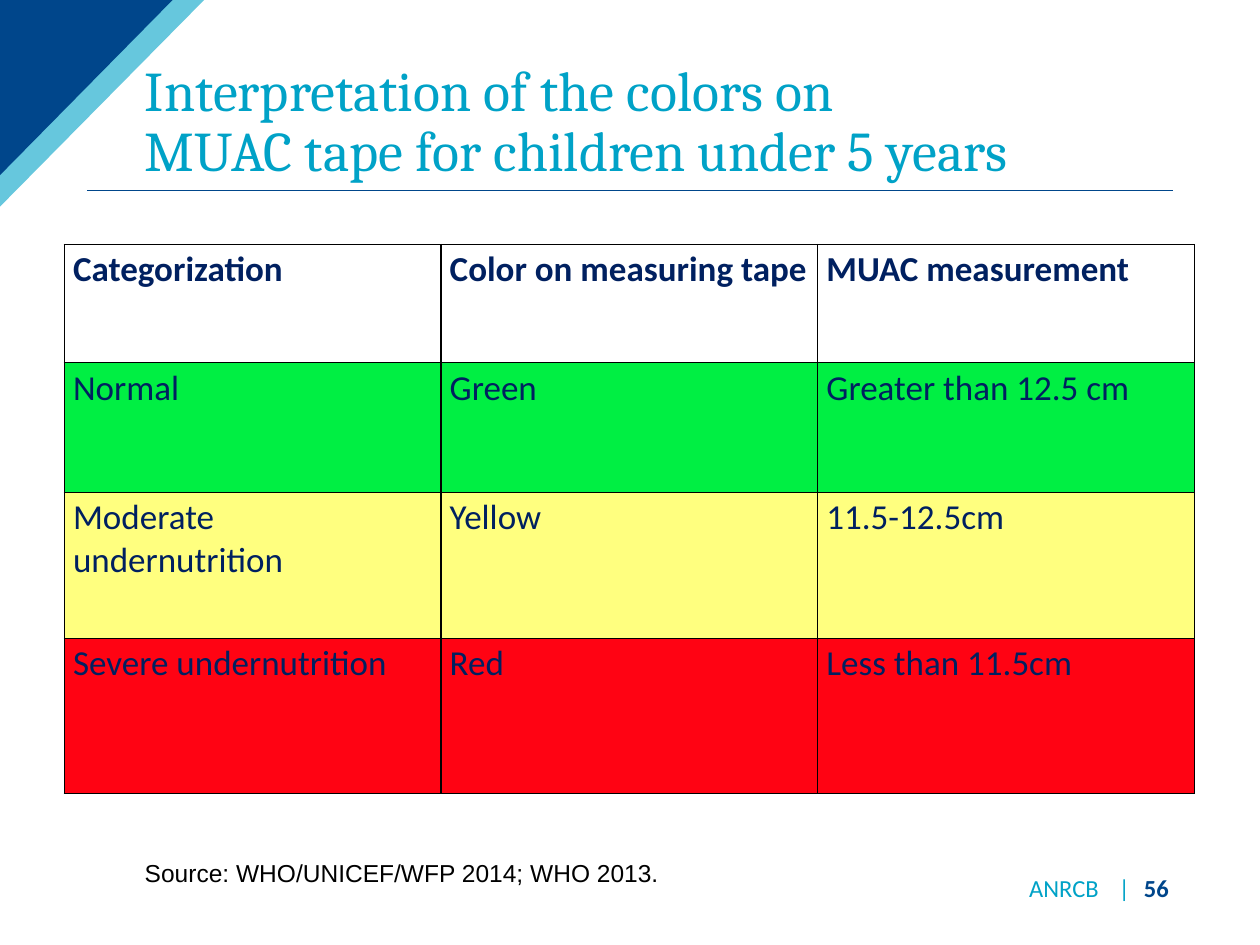
"""Build the slide on reading the colors of a MUAC tape."""
from dataclasses import dataclass

from lxml import etree
from pptx import Presentation
from pptx.dml.color import RGBColor
from pptx.enum.shapes import MSO_CONNECTOR
from pptx.enum.text import MSO_ANCHOR, PP_ALIGN
from pptx.oxml.ns import qn
from pptx.util import Emu, Inches, Pt

STRAIGHT = MSO_CONNECTOR.STRAIGHT
BOTTOM, MIDDLE, TOP = MSO_ANCHOR.BOTTOM, MSO_ANCHOR.MIDDLE, MSO_ANCHOR.TOP
LEFT = PP_ALIGN.LEFT

SLIDE_WIDTH, SLIDE_HEIGHT = Inches(10), Inches(7.5)
GRID_COLUMNS = 100
TITLE_ONLY = 5

COLORS = {
    "navy": "00468B",
    "cyan": "00A2C7",
    "table_text": "002060",
    "black": "000000",
    "white": "FFFFFF",
    "green": "00EF43",
    "yellow": "FFFF7F",
    "red": "FF0313",
}


@dataclass(frozen=True)
class Area:
    """A rectangle in grid units."""
    column: float
    row: float
    columns: float
    rows: float


@dataclass(frozen=True)
class Style:
    """The look of a run of text."""
    font: str
    size: int
    color: str
    bold: bool = False


@dataclass(frozen=True)
class Corner:
    """A triangle filling the top left corner of the slide."""
    columns: float
    rows: float
    color: str
    opacity: int = 100


@dataclass(frozen=True)
class Category:
    """A table row: its height, fill and cell texts."""
    rows: float
    fill: str
    texts: tuple[str, str, str]
    bold: bool = False


CORNERS = (
    Corner(16.2, 16.4, "cyan", 60),
    Corner(13.7, 13.9, "navy"),
)
CATEGORIES = (
    Category(9.4, "white", ("Categorization", "Color on measuring tape", "MUAC measurement"), True),
    Category(10.3, "green", ("Normal", "Green", "Greater than 12.5 cm")),
    Category(11.6, "yellow", ("Moderate undernutrition", "Yellow", "11.5-12.5cm")),
    Category(12.3, "red", ("Severe undernutrition", "Red", "Less than 11.5cm")),
)
TITLE_LINES = ("Interpretation of the colors on", "MUAC tape for children under 5 years")


def grid(units: float) -> Emu:
    """Turn grid units into a length."""
    return Emu(round(SLIDE_WIDTH * units / GRID_COLUMNS))


def place(area: Area) -> tuple[Emu, Emu, Emu, Emu]:
    """Give left, top, width and height of an area."""
    return grid(area.column), grid(area.row), grid(area.columns), grid(area.rows)


def rgb(name: str) -> RGBColor:
    """Look up a color by name."""
    return RGBColor.from_string(COLORS[name])


def add_run(paragraph, text: str, style: Style) -> None:
    """Add a styled run to a paragraph."""
    run = paragraph.add_run()
    run.text = text
    run.font.name = style.font
    run.font.size = Pt(style.size)
    run.font.bold = style.bold
    run.font.color.rgb = rgb(style.color)


def set_insets(holder, side: float, edge: float) -> None:
    """Set the inner margins of a text frame or cell."""
    holder.margin_left = holder.margin_right = grid(side)
    holder.margin_top = holder.margin_bottom = grid(edge)


def add_corner(slide, corner: Corner) -> None:
    """Draw a corner triangle."""
    builder = slide.shapes.build_freeform(0, 0)
    builder.add_line_segments([(grid(corner.columns), 0), (0, grid(corner.rows))], close=True)
    triangle = builder.convert_to_shape()
    triangle.shadow.inherit = False
    triangle.line.fill.background()
    triangle.fill.solid()
    triangle.fill.fore_color.rgb = rgb(corner.color)
    if corner.opacity < 100:
        color = triangle.fill._xPr.find(f".//{qn('a:srgbClr')}")
        etree.SubElement(color, qn("a:alpha"), val=str(corner.opacity * 1000))


def add_title_rule(slide) -> None:
    """Draw the line under the title."""
    rule = slide.shapes.add_connector(STRAIGHT, grid(6.9), grid(15.1), grid(93.1), grid(15.1))
    rule.line.color.rgb = rgb("navy")
    rule.line.width = Pt(0.75)
    etree.SubElement(rule._element.spPr, qn("a:effectLst"))


def fill_title(slide) -> None:
    """Move and fill the title placeholder."""
    title = slide.shapes.title
    title.left, title.top, title.width, title.height = place(Area(10.5, 3.5, 82.6, 11.6))
    frame = title.text_frame
    frame.word_wrap = True
    frame.vertical_anchor = BOTTOM
    set_insets(frame, 1, 0.5)
    paragraph = frame.paragraphs[0]
    paragraph.alignment = LEFT
    paragraph.line_spacing = 0.9
    style = Style("Cambria", 32, "cyan")
    first, second = TITLE_LINES
    add_run(paragraph, first, style)
    paragraph.add_line_break()
    add_run(paragraph, second, style)


def add_text_frame(slide, area: Area, anchor: MSO_ANCHOR, edge: float):
    """Add a wrapping text box and return its frame."""
    frame = slide.shapes.add_textbox(*place(area)).text_frame
    frame.word_wrap = True
    frame.vertical_anchor = anchor
    set_insets(frame, 1, edge)
    return frame


def add_footer(slide) -> None:
    """Add the course name and page number, spaced by tabs."""
    frame = add_text_frame(slide, Area(80.7, 69.4, 13.1, 2.1), MIDDLE, 0.5)
    frame.margin_right = 0
    paragraph = frame.paragraphs[0]
    tabs = etree.SubElement(paragraph._p.get_or_add_pPr(), qn("a:tabLst"))
    for stop in (7.1, 9.1):
        etree.SubElement(tabs, qn("a:tab"), pos=str(grid(stop)), algn="l")
    add_run(paragraph, "ANRCB\t|\t", Style("Calibri", 14, "cyan"))
    add_run(paragraph, "56", Style("Calibri", 14, "navy", True))


def add_borders(cell) -> None:
    """Draw thin black lines on all sides of a cell."""
    properties = cell._tc.get_or_add_tcPr()
    for side in ("lnL", "lnR", "lnT", "lnB"):
        border = etree.SubElement(properties, qn(f"a:{side}"), w=str(Pt(0.75)))
        fill = etree.SubElement(border, qn("a:solidFill"))
        etree.SubElement(fill, qn("a:srgbClr"), val=COLORS["black"])


def add_category_table(slide) -> None:
    """Add the table of tape colors and measurements."""
    height = sum(category.rows for category in CATEGORIES)
    area = Area(5.1, 19.4, 89.7, height)
    table = slide.shapes.add_table(len(CATEGORIES), 3, *place(area)).table
    for column in table.columns:
        column.width = grid(area.columns / 3)
    for row, category in zip(table.rows, CATEGORIES):
        row.height = grid(category.rows)
        style = Style("Calibri", 20, "table_text", category.bold)
        for cell, text in zip(row.cells, category.texts):
            set_insets(cell, 0.7, 0.3)
            add_borders(cell)
            cell.fill.solid()
            cell.fill.fore_color.rgb = rgb(category.fill)
            add_run(cell.text_frame.paragraphs[0], text, style)


def main() -> None:
    """Build and save the slide."""
    deck = Presentation()
    deck.slide_width, deck.slide_height = SLIDE_WIDTH, SLIDE_HEIGHT
    slide = deck.slides.add_slide(deck.slide_layouts[TITLE_ONLY])
    add_title_rule(slide)
    for corner in CORNERS:
        add_corner(slide, corner)
    fill_title(slide)
    add_footer(slide)
    add_category_table(slide)
    source = add_text_frame(slide, Area(10.5, 67.1, 56.9, 4.4), TOP, 1)
    add_run(source.paragraphs[0], "Source: WHO/UNICEF/WFP 2014; WHO 2013.", Style("Arial", 14, "black"))
    deck.save("out.pptx")


if __name__ == "__main__":
    main()
